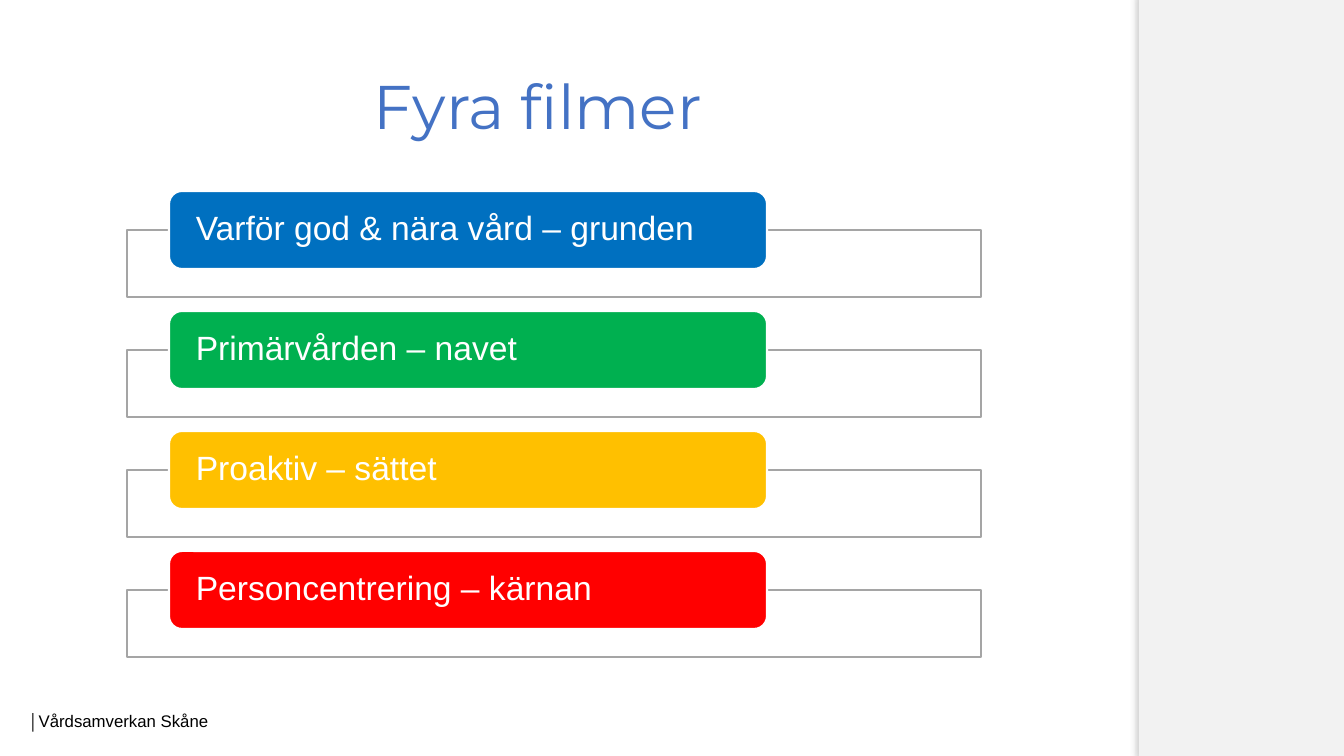
from dataclasses import dataclass

from lxml import etree
from pptx import Presentation
from pptx.dml.color import RGBColor
from pptx.enum.shapes import MSO_SHAPE
from pptx.enum.text import MSO_ANCHOR, PP_ALIGN
from pptx.oxml.ns import qn
from pptx.util import Emu, Pt

RECT, ROUNDED = MSO_SHAPE.RECTANGLE, MSO_SHAPE.ROUNDED_RECTANGLE
MIDDLE = MSO_ANCHOR.MIDDLE
LEFT, CENTER = PP_ALIGN.LEFT, PP_ALIGN.CENTER
EMU_PER_PX = 914400 / 100.8
TITLE_ONLY = 5


@dataclass(frozen=True)
class Theme:
    heading_font: str = "Montserrat"
    body_font: str = "Arial"
    title: str = "4472C4"
    panel: str = "F2F2F2"
    frame_line: str = "A5A5A5"
    white: str = "FFFFFF"
    black: str = "000000"
    title_size: int = 44
    film_size: int = 24
    footer_size: int = 12
    bar_size: int = 11


THEME = Theme()

FILMS = [
    ("Varför god & nära vård – grunden", "0070C0"),
    ("Primärvården – navet", "00B050"),
    ("Proaktiv – sättet", "FFC000"),
    ("Personcentrering – kärnan", "FF0000"),
]
FIRST_FILM_TOP = 191
FILM_PITCH = 120


def px(length):
    return Emu(round(length * EMU_PER_PX))


def place(left, top, width, height):
    return px(left), px(top), px(width), px(height)


def rgb(color):
    return RGBColor.from_string(color)


def add_run(paragraph, text, size, color, font=THEME.body_font, bold=False):
    run = paragraph.add_run()
    run.text = text
    run.font.name = font
    run.font.size = Pt(size)
    run.font.bold = bold
    run.font.color.rgb = rgb(color)


def set_frame(frame, left, right, top=0, bottom=0):
    frame.word_wrap = True
    frame.vertical_anchor = MIDDLE
    frame.margin_left, frame.margin_right = px(left), px(right)
    frame.margin_top, frame.margin_bottom = px(top), px(bottom)


def add_block(slide, preset, box, fill, line=None, line_width=1):
    block = slide.shapes.add_shape(preset, *place(*box))
    block.shadow.inherit = False
    block.fill.solid()
    block.fill.fore_color.rgb = rgb(fill)
    if line:
        block.line.color.rgb = rgb(line)
        block.line.width = Pt(line_width)
    else:
        block.line.fill.background()
    return block


def add_side_panel(slide):
    panel = add_block(slide, RECT, (1139, -10, 206, 773), THEME.panel)
    effects = panel.fill._xPr.find(qn("a:effectLst"))
    shadow = etree.SubElement(effects, qn("a:outerShdw"), blurRad=str(Pt(11)),
                              dist=str(Pt(4)), dir="0", algn="l", rotWithShape="0")
    color = etree.SubElement(shadow, qn("a:srgbClr"), val=THEME.black)
    etree.SubElement(color, qn("a:alpha"), val="90000")


def add_footer(slide):
    footer = slide.shapes.add_textbox(*place(19, 701, 302, 40))
    set_frame(footer.text_frame, 10, 10, 5, 5)
    paragraph = footer.text_frame.paragraphs[0]
    add_run(paragraph, "│", THEME.bar_size, THEME.black, bold=True)
    add_run(paragraph, "Vårdsamverkan Skåne", THEME.footer_size, THEME.black)


def set_title(slide, text):
    title = slide.shapes.title
    title.left, title.top, title.width, title.height = place(127, 63, 854, 94)
    # The wider right margin sets the heading slightly left of centre
    set_frame(title.text_frame, 10, 42, 5, 5)
    paragraph = title.text_frame.paragraphs[0]
    paragraph.alignment = CENTER
    paragraph.line_spacing = 0.9
    add_run(paragraph, text, THEME.title_size, THEME.title, THEME.heading_font)


def add_film(slide, top, name, color):
    # Outlined frame behind the coloured label
    add_block(slide, RECT, (127, top + 39, 854, 67), THEME.white, THEME.frame_line)
    label = add_block(slide, ROUNDED, (169, top, 598, 78), color, THEME.white, 1.5)
    set_frame(label.text_frame, 23, 23)
    paragraph = label.text_frame.paragraphs[0]
    paragraph.alignment = LEFT
    paragraph.line_spacing = 0.9
    add_run(paragraph, name, THEME.film_size, THEME.white)


def main():
    deck = Presentation()
    deck.slide_width, deck.slide_height = px(1344), px(756)
    slide = deck.slides.add_slide(deck.slide_layouts[TITLE_ONLY])

    # Surroundings
    add_side_panel(slide)
    add_footer(slide)

    # Heading and the list of films
    set_title(slide, "Fyra filmer")
    for index, (name, color) in enumerate(FILMS):
        add_film(slide, FIRST_FILM_TOP + index * FILM_PITCH, name, color)

    deck.save("out.pptx")


if __name__ == "__main__":
    main()
